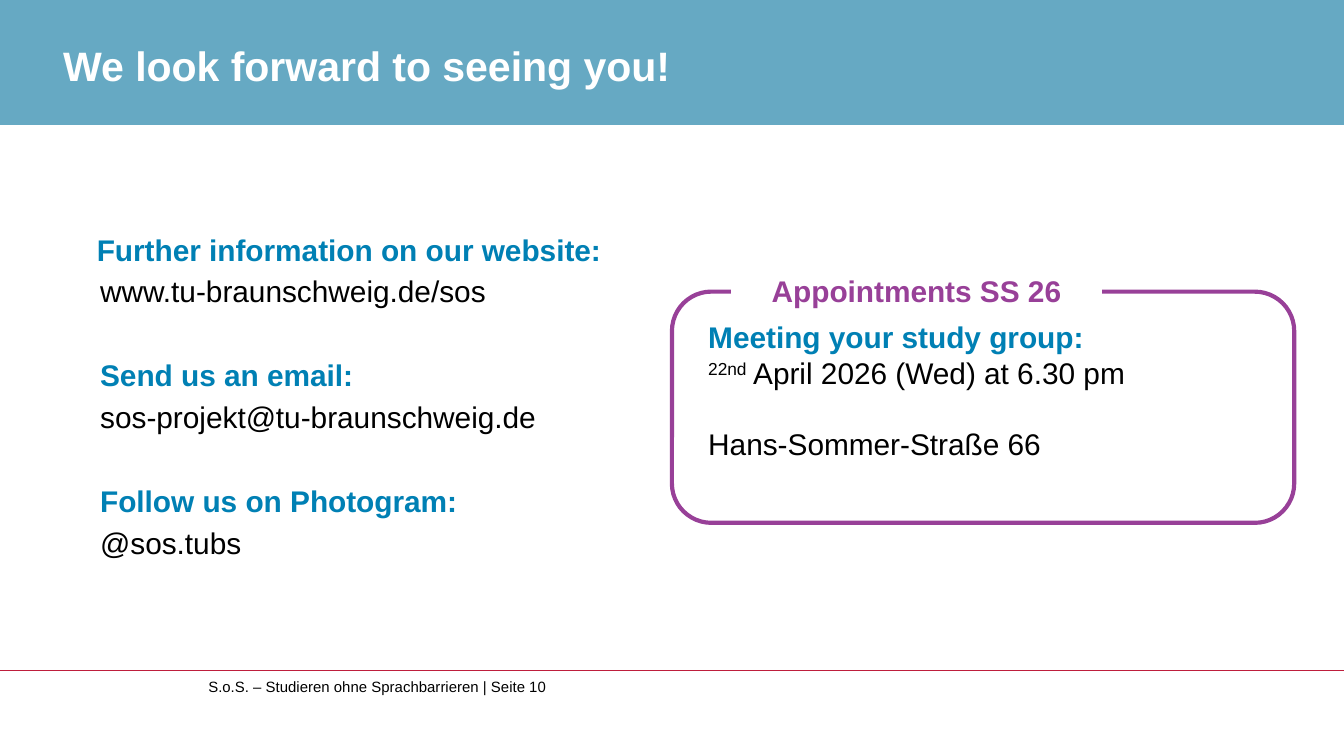
import dataclasses
import typing

import pptx
import pptx.dml.color
import pptx.enum.shapes
import pptx.enum.text
import pptx.oxml
import pptx.oxml.ns
import pptx.util

Pt = pptx.util.Pt
Align = pptx.enum.text.PP_ALIGN
Anchor = pptx.enum.text.MSO_ANCHOR
Kind = pptx.enum.shapes.MSO_SHAPE

WIDTH = pptx.util.Inches(10)
HEIGHT = WIDTH * 9 // 16
CELL = WIDTH // 100  # square grid of 100 columns
INKS = {
    "band": "66A9C3",
    "head": "0080B4",
    "card": "984098",
    "rule": "BE1E3C",
    "text": "000000",
    "white": "FFFFFF",
}


@dataclasses.dataclass(frozen=True)
class Area:
    """Place on the grid, in columns and rows."""

    col: float
    row: float
    wide: float
    high: float

    def box(self) -> list[int]:
        return [round(n * CELL) for n in (self.col, self.row, self.wide, self.high)]


@dataclasses.dataclass(frozen=True)
class Topic:
    head: str
    line: str
    inset: float = 2.75


TOPICS = (
    Topic("Further information on our website:", "www.tu-braunschweig.de/sos", 2.5),
    Topic("Send us an email:", "sos-projekt@tu-braunschweig.de"),
    Topic("Follow us on Photogram:", "@sos.tubs"),
)


def color(ink: str) -> pptx.dml.color.RGBColor:
    return pptx.dml.color.RGBColor.from_string(INKS[ink])


def place(shape: typing.Any, area: Area) -> None:
    shape.left, shape.top, shape.width, shape.height = area.box()


def frame(shape: typing.Any, anchor: Anchor = Anchor.TOP) -> typing.Any:
    """Return the shape's text frame, wrapped and without margins."""
    body = shape.text_frame
    body.word_wrap = True
    body.auto_size = pptx.enum.text.MSO_AUTO_SIZE.NONE
    body.vertical_anchor = anchor
    body.margin_left = body.margin_right = body.margin_top = body.margin_bottom = 0
    return body


def write(body: typing.Any, text: str, *, size: float = 16, ink: str = "text",
          bold: bool = False, align: Align = Align.LEFT, before: float = 0,
          inset: float = 0, sup: str = "") -> None:
    """Add a paragraph, with an optional superscript in front."""
    para = body.paragraphs[0]
    if para.runs:
        para = body.add_paragraph()
    props = para._p.get_or_add_pPr()
    props.set("marL", str(round(inset * CELL)))
    props.set("indent", "0")
    props.append(pptx.oxml.parse_xml(f"<a:buNone {pptx.oxml.ns.nsdecls('a')}/>"))
    para.alignment = align
    para.space_before, para.space_after = Pt(before), Pt(0)
    for part in filter(None, (sup, text)):
        run = para.add_run()
        run.text = part
        font = run.font
        font.name, font.size, font.bold = "Arial", Pt(size), bold
        font.color.rgb = color(ink)
        if part == sup:
            run._r.get_or_add_rPr().set("baseline", "30000")


def block(slide: typing.Any, kind: Kind, area: Area, fill: str = "",
          line: str = "") -> typing.Any:
    shape = slide.shapes.add_shape(kind, *area.box())
    shape.shadow.inherit = False
    if fill:
        shape.fill.solid()
        shape.fill.fore_color.rgb = color(fill)
    else:
        shape.fill.background()
    if line:
        shape.line.color.rgb = color(line)
        shape.line.width = Pt(2.25)
    else:
        shape.line.fill.background()
    return shape


def footer(slide: typing.Any) -> None:
    row = round(49.9 * CELL)
    rule = slide.shapes.add_connector(
        pptx.enum.shapes.MSO_CONNECTOR.STRAIGHT, 0, row, WIDTH, row)
    rule.line.color.rgb = color("rule")
    rule.line.width = Pt(0.75)
    rule._element.spPr.append(
        pptx.oxml.parse_xml(f"<a:effectLst {pptx.oxml.ns.nsdecls('a')}/>"))
    note = slide.shapes.add_textbox(*Area(15.5, 50.4, 48.7, 2.7).box())
    write(frame(note), "S.o.S. – Studieren ohne Sprachbarrieren | Seite 10", size=8)


def header(slide: typing.Any) -> None:
    band = block(slide, Kind.RECTANGLE, Area(0, 0, 100, 9.3), fill="band")
    title = slide.shapes.title
    place(title, Area(4.7, 0.9, 91.6, 5.8))
    title._element.addprevious(band._element)  # band goes behind the title
    write(frame(title, Anchor.BOTTOM), "We look forward to seeing you!",
          size=22, ink="white", bold=True)


def contact(slide: typing.Any) -> None:
    shape = slide.placeholders[1]
    place(shape, Area(4.7, 17.2, 41, 25))
    body = frame(shape)
    for i, topic in enumerate(TOPICS):
        write(body, topic.head, ink="head", bold=True,
              before=25.7 if i else 0, inset=topic.inset)
        write(body, topic.line, before=3.2, inset=2.75)


def card(slide: typing.Any) -> None:
    edge = block(slide, Kind.ROUNDED_RECTANGLE, Area(50, 21.7, 46.3, 17.2), line="card")
    edge.adjustments[0] = 0.17
    label = block(slide, Kind.RECTANGLE, Area(54.4, 19.8, 27.6, 3.7), fill="white")
    write(frame(label, Anchor.MIDDLE), "Appointments SS 26", ink="card",
          bold=True, align=Align.CENTER)
    body = frame(slide.shapes.add_textbox(*Area(52.7, 23.7, 42, 13).box()))
    write(body, "Meeting your study group:", ink="head", bold=True)
    write(body, " April 2026 (Wed) at 6.30 pm", sup="22nd")
    write(body, "Hans-Sommer-Straße 66", before=19.3)


def main() -> None:
    deck = pptx.Presentation()
    deck.slide_width, deck.slide_height = WIDTH, HEIGHT
    slide = deck.slides.add_slide(deck.slide_layouts[1])
    for draw in (footer, header, contact, card):
        draw(slide)
    deck.save("out.pptx")


if __name__ == "__main__":
    main()
